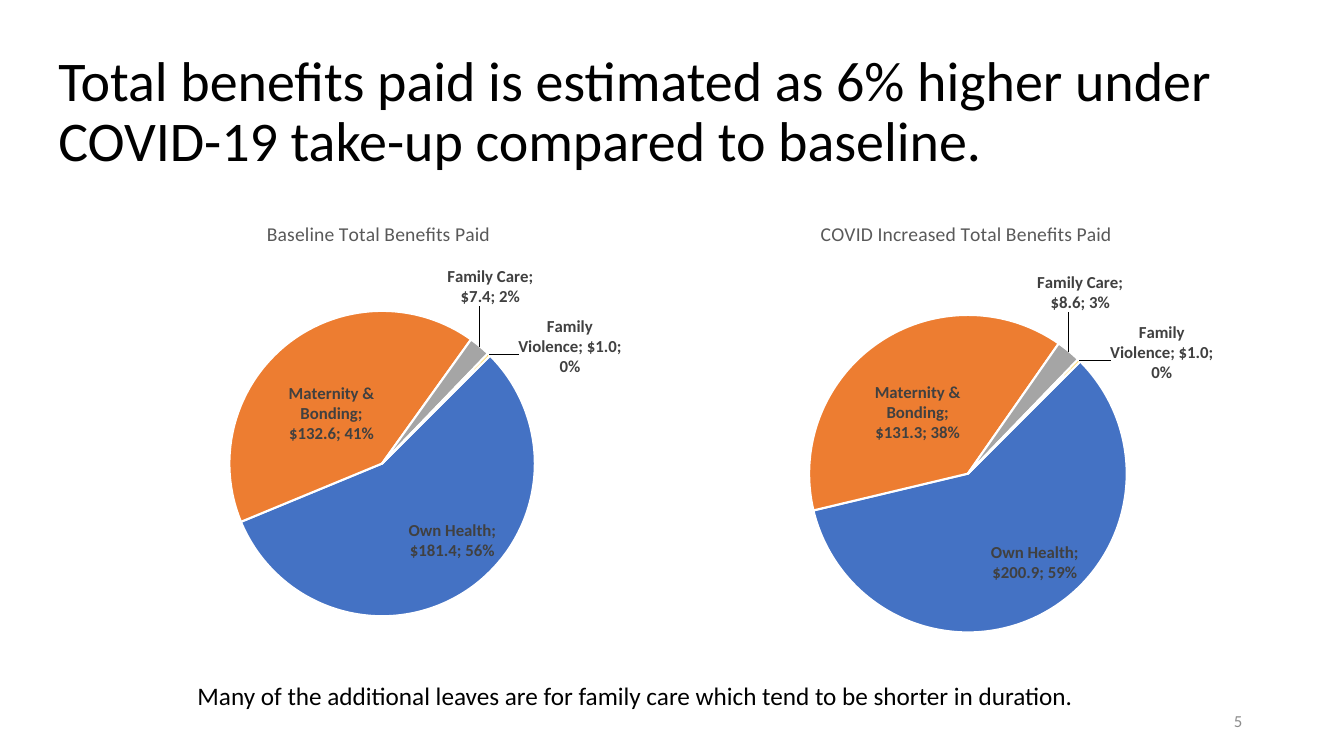
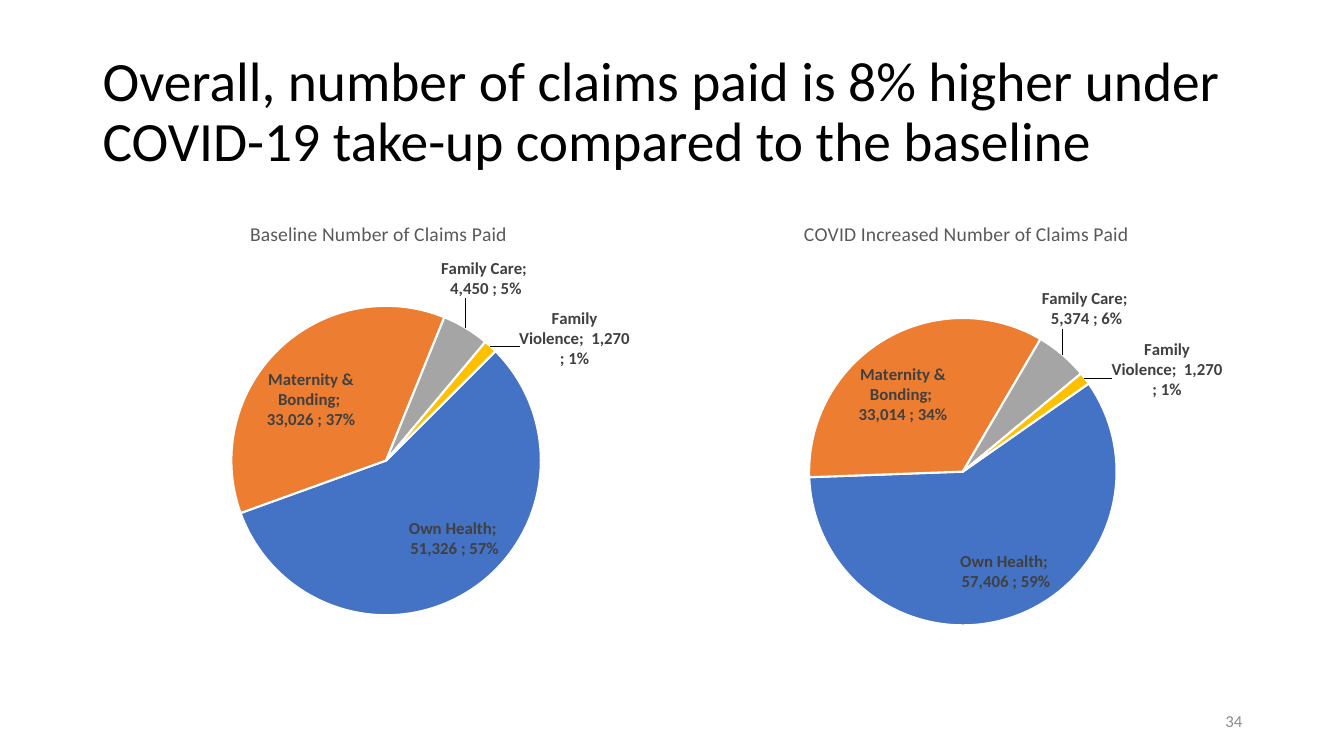
from copy import deepcopy
from itertools import accumulate
from math import copysign, cos, radians, sin

from lxml.etree import SubElement
from pptx import Presentation
from pptx.chart.data import CategoryChartData
from pptx.dml.color import RGBColor
from pptx.enum.chart import XL_CHART_TYPE, XL_LABEL_POSITION
from pptx.enum.text import MSO_ANCHOR, PP_ALIGN
from pptx.oxml import parse_xml
from pptx.oxml.ns import nsdecls, qn
from pptx.util import Inches, Pt

FONT = "Calibri"
BLACK = RGBColor(0x00, 0x00, 0x00)
WHITE = RGBColor(0xFF, 0xFF, 0xFF)
PAGE_GREY = RGBColor(0x8C, 0x8C, 0x8C)
HEADING_GREY = RGBColor(0x59, 0x59, 0x59)
LABEL_GREY = RGBColor(0x40, 0x40, 0x40)
SLICE_COLORS = [
    RGBColor(0x44, 0x72, 0xC4),
    RGBColor(0xED, 0x7D, 0x31),
    RGBColor(0xA5, 0xA5, 0xA5),
    RGBColor(0xFF, 0xC0, 0x00),
]
LEAVE_TYPES = ["Own Health", "Maternity & Bonding", "Family Care", "Family Violence"]
DOLLARS = '"$"#,##0.0'
COUNTS = r'_(* #,##0_);_(* \(#,##0\);_(* "-"??_);_('
CHART_TOP, CHART_WIDTH, CHART_HEIGHT = 2, 5.67, 4.76
CHART_LEFTS = [0.92, 6.75]

SLIDES = [
    {
        "title": "Total benefits paid is estimated as 6% higher under COVID-19 take-up compared to baseline.",
        "title_left": 0.48, "title_width": 12.19, "title_size": 40,
        "page": "5", "format": DOLLARS,
        "note": "Many of the additional leaves are for family care which tend to be shorter in duration.",
        "label_sizes": [(0.92, 0.5), (1.24, 0.7), (0.92, 0.5), (1.08, 0.7)],
        "pies": [
            {"heading": "Baseline Total Benefits Paid", "values": [181.4, 132.6, 7.4, 1.0],
             "start": 45, "center": (3.79, 4.6), "diameter": 3.03,
             "labels": [(4.48, 5.37), (3.13, 4.1), (4.86, 2.84), (5.64, 3.43)]},
            {"heading": "COVID Increased Total Benefits Paid", "values": [200.9, 131.3, 8.6, 1.0],
             "start": 45, "center": (9.6, 4.7), "diameter": 3.15,
             "labels": [(10.26, 5.58), (8.94, 4.09), (10.71, 2.9), (11.51, 3.49)]},
        ],
    },
    {
        "title": "Overall, number of claims paid is 8% higher under COVID-19 take-up compared to the baseline",
        "title_left": 0.92, "title_width": 11.5, "title_size": 39.6,
        "page": "34", "format": COUNTS, "note": None,
        "label_sizes": [(0.95, 0.5), (0.95, 0.7), (0.95, 0.5), (0.8, 0.7)],
        "pies": [
            {"heading": "Baseline Number of Claims Paid", "values": [51326, 33026, 4450, 1270],
             "start": 45, "center": (3.83, 4.57), "diameter": 3.07,
             "labels": [(4.5, 5.35), (3.09, 3.96), (4.82, 2.76), (5.51, 3.35)]},
            {"heading": "COVID Increased Number of Claims Paid", "values": [57406, 33014, 5374, 1270],
             "start": 55, "center": (9.55, 4.68), "diameter": 3.05,
             "labels": [(9.98, 5.67), (8.95, 3.91), (10.77, 3.06), (11.38, 3.65)]},
        ],
    },
]


def add_text(slide, text, left, top, width, height, size, color=BLACK,
             anchor=MSO_ANCHOR.MIDDLE, align=PP_ALIGN.LEFT, spacing=1.0):
    box = slide.shapes.add_textbox(Inches(left), Inches(top), Inches(width), Inches(height))
    box.text_frame.word_wrap = True
    box.text_frame.vertical_anchor = anchor
    paragraph = box.text_frame.paragraphs[0]
    paragraph.text = text
    paragraph.alignment = align
    paragraph.line_spacing = spacing
    paragraph.font.name = FONT
    paragraph.font.size = Pt(size)
    paragraph.font.color.rgb = color


def add_pie(slide, pie, chart_left, number_format, label_sizes):
    data = CategoryChartData(number_format=number_format)
    data.categories = LEAVE_TYPES
    data.add_series(pie["heading"], pie["values"])
    chart = slide.shapes.add_chart(
        XL_CHART_TYPE.PIE, Inches(chart_left), Inches(CHART_TOP),
        Inches(CHART_WIDTH), Inches(CHART_HEIGHT), data).chart
    chart.font.name = FONT
    chart.font.size = Pt(10)
    chart.font.color.rgb = BLACK
    chart.has_legend = False
    chart.has_title = True
    heading = chart.chart_title.text_frame.paragraphs[0]
    heading.text = pie["heading"]
    heading.font.name = FONT
    heading.font.size = Pt(14)
    heading.font.bold = False
    heading.font.color.rgb = HEADING_GREY
    chart.chart_title.include_in_layout = False

    plot = chart.plots[0]
    plot.vary_by_categories = True
    series = plot.series[0]
    pie_xml = series._element.getparent()
    for old_angle in pie_xml.findall(qn("c:firstSliceAng")):
        pie_xml.remove(old_angle)
    SubElement(pie_xml, qn("c:firstSliceAng")).set("val", str(pie["start"]))

    center_x, center_y = pie["center"]
    diameter = pie["diameter"]
    x = (center_x - diameter / 2 - chart_left) / CHART_WIDTH
    y = (center_y - diameter / 2 - CHART_TOP) / CHART_HEIGHT
    plot_area = pie_xml.getparent()
    for old_layout in plot_area.findall(qn("c:layout")):
        plot_area.remove(old_layout)
    plot_area.insert(0, parse_xml(
        f'<c:layout {nsdecls("c")}><c:manualLayout><c:layoutTarget val="inner"/>'
        f'<c:xMode val="edge"/><c:yMode val="edge"/><c:x val="{x:.4f}"/><c:y val="{y:.4f}"/>'
        f'<c:w val="{diameter / CHART_WIDTH:.4f}"/><c:h val="{diameter / CHART_HEIGHT:.4f}"/>'
        '</c:manualLayout></c:layout>'))

    for index, color in enumerate(SLICE_COLORS):
        slice_format = series.points[index].format
        slice_format.fill.solid()
        slice_format.fill.fore_color.rgb = color
        slice_format.line.color.rgb = WHITE
        slice_format.line.width = Pt(1.5)

    labels = series.data_labels
    labels.show_value = labels.show_percentage = labels.show_category_name = True
    labels.position = XL_LABEL_POSITION.BEST_FIT
    labels.font.name = FONT
    labels.font.size = Pt(12)
    labels.font.bold = True
    labels.font.color.rgb = LABEL_GREY
    separator = parse_xml(f'<c:separator {nsdecls("c")}>; </c:separator>')
    labels._element.find(qn("c:showBubbleSize")).addnext(separator)
    label_text = labels._element.find(qn("c:txPr"))

    total = sum(pie["values"])
    ends = accumulate(pie["values"])
    for index, (value, end, target, size) in enumerate(
            zip(pie["values"], ends, pie["labels"], label_sizes)):
        angle = radians(pie["start"] + 360 * (end - value / 2) / total)
        across, down = sin(angle), -cos(angle)
        width, height = size
        default_x = center_x + diameter / 2 * across + copysign(width / 2, across)
        default_y = center_y + diameter / 2 * down + copysign(height / 2, down)
        dx = (target[0] - default_x) / CHART_WIDTH
        dy = (target[1] - default_y) / CHART_HEIGHT
        label = parse_xml(
            f'<c:dLbl {nsdecls("c")}><c:idx val="{index}"/><c:layout><c:manualLayout>'
            f'<c:x val="{dx:.4f}"/><c:y val="{dy:.4f}"/></c:manualLayout></c:layout>'
            '<c:dLblPos val="bestFit"/><c:showLegendKey val="0"/><c:showVal val="1"/>'
            '<c:showCatName val="1"/><c:showSerName val="0"/><c:showPercent val="1"/>'
            '<c:showBubbleSize val="0"/><c:separator>; </c:separator>'
            '<c:extLst><c:ext uri="{CE6537A1-D6FC-4f65-9D91-7224C49458BB}" '
            'xmlns:c15="http://schemas.microsoft.com/office/drawing/2012/chart">'
            f'<c15:layout><c:manualLayout><c:w val="{width / CHART_WIDTH:.4f}"/>'
            f'<c:h val="{height / CHART_HEIGHT:.4f}"/></c:manualLayout></c15:layout>'
            '</c:ext></c:extLst></c:dLbl>')
        label.find(qn("c:dLblPos")).addprevious(deepcopy(label_text))
        labels._element.insert(index, label)


deck = Presentation()
deck.slide_width = Inches(13.33)
deck.slide_height = Inches(7.5)

for content in SLIDES:
    slide = deck.slides.add_slide(deck.slide_layouts[6])
    add_text(slide, content["title"], content["title_left"], 0.4, content["title_width"], 1.45,
             content["title_size"], spacing=0.9)
    add_text(slide, content["page"], 9.42, 6.95, 3, 0.4, 12, PAGE_GREY, align=PP_ALIGN.RIGHT)
    for pie, chart_left in zip(content["pies"], CHART_LEFTS):
        add_pie(slide, pie, chart_left, content["format"], content["label_sizes"])
    if content["note"]:
        add_text(slide, content["note"], 1.86, 6.7, 9.78, 0.4, 18, anchor=MSO_ANCHOR.TOP)

deck.save("out.pptx")
